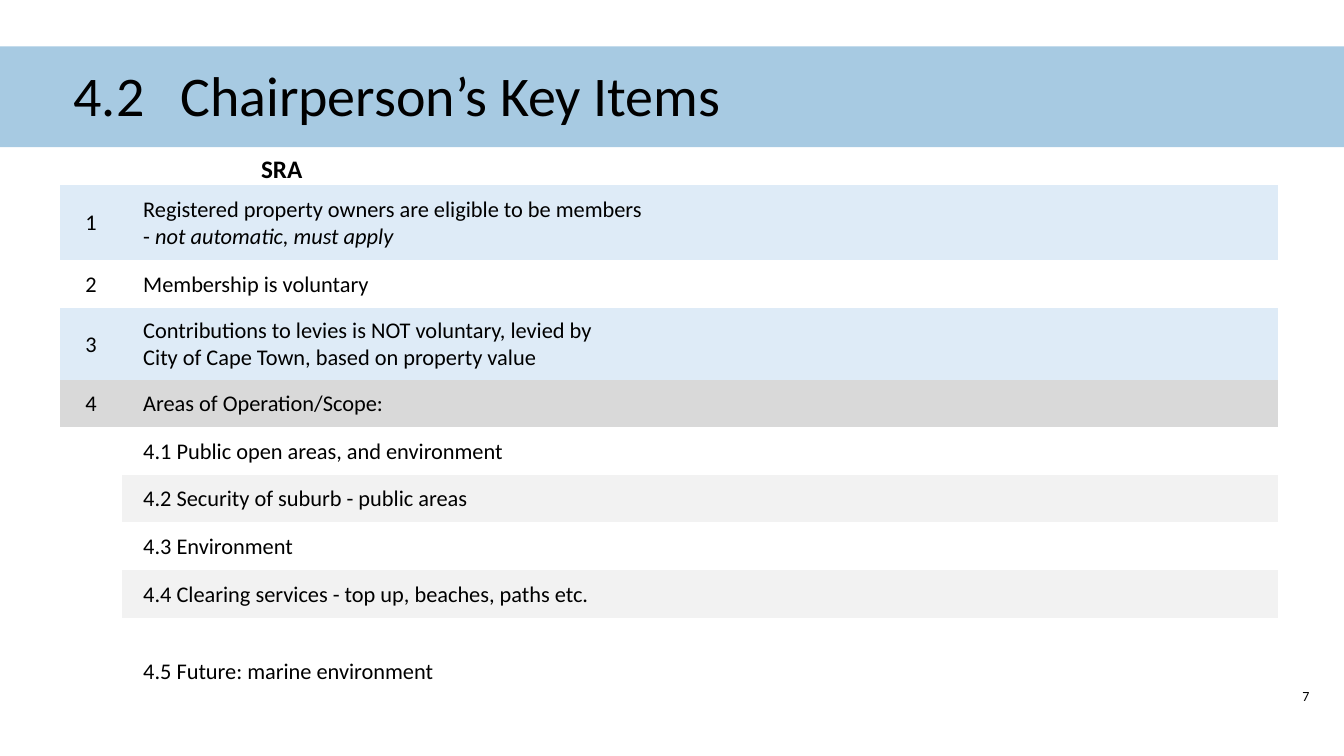
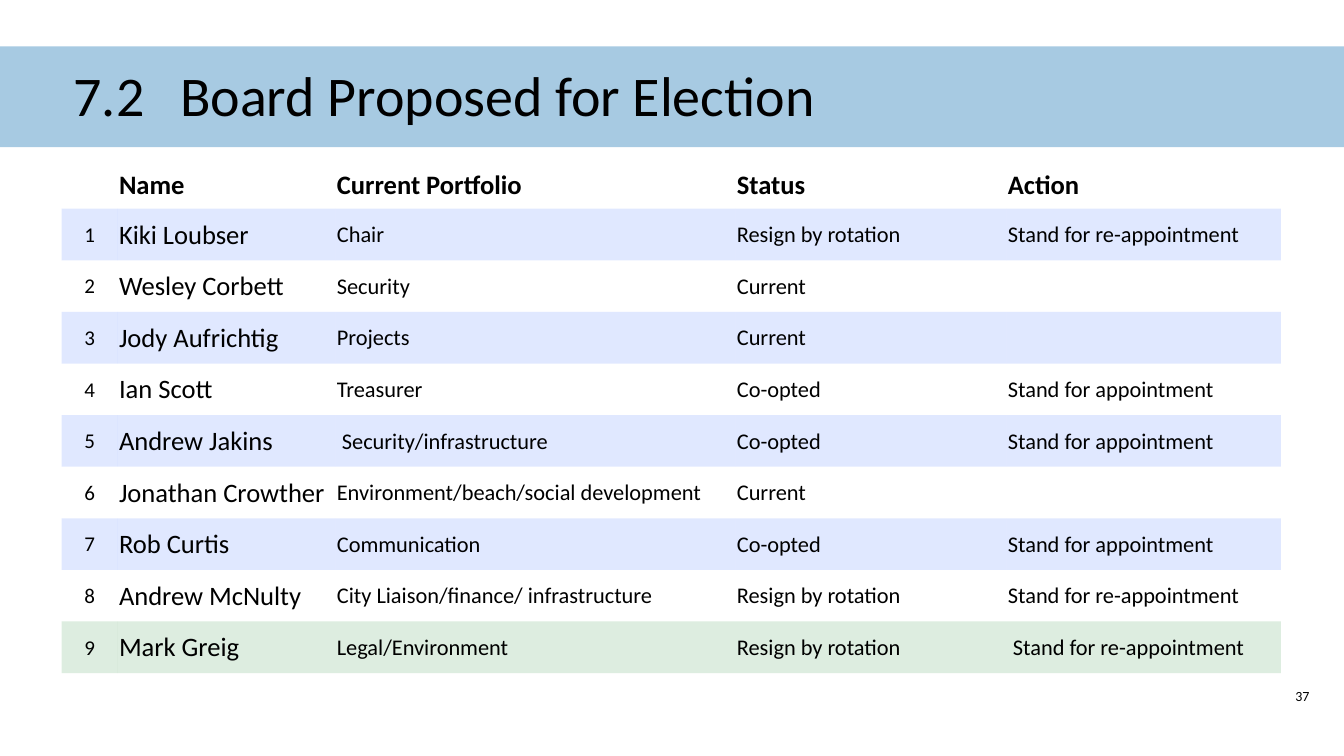
"""Build the chairperson's key items and board election slides."""
from lxml import etree
from pptx import Presentation
from pptx import util as u
from pptx.dml.color import RGBColor
from pptx.enum import shapes, text
from pptx.oxml import ns

BLACK = RGBColor(0x00, 0x00, 0x00)
BAND = RGBColor(0x3C, 0x8A, 0xC0)
PALE_BLUE = RGBColor(0xDE, 0xEB, 0xF7)
GREY = RGBColor(0xD9, 0xD9, 0xD9)
PALE_GREY = RGBColor(0xF2, 0xF2, 0xF2)
BLUE = RGBColor(0x33, 0x66, 0xFF)
GREEN = RGBColor(0x1C, 0x8C, 0x31)
FONT = "Calibri"
NO_GRID = "{2D5ABB26-0587-4C30-8999-92F81FD0307C}"
LEFT, CENTER, RIGHT = (text.PP_ALIGN.LEFT, text.PP_ALIGN.CENTER,
                       text.PP_ALIGN.RIGHT)


class Deck:
    """Hold the shared style and the current slide."""

    def __init__(self):
        """Start an empty widescreen presentation."""
        self.prs = Presentation()
        self.prs.slide_width = u.Cm(33.87)
        self.prs.slide_height = u.Cm(19.05)
        self.s = None

    def add_run(self, p, words, size, bold=False, italic=False):
        """Add one run in the deck's font."""
        r = p.add_run()
        r.text = words
        r.font.name = FONT
        r.font.size = u.Pt(size)
        r.font.bold = bold
        r.font.italic = italic
        r.font.color.rgb = BLACK

    def set_fill(self, fill, color, alpha=100):
        """Apply a solid fill with an opacity in percent."""
        fill.solid()
        fill.fore_color.rgb = color
        if alpha < 100:
            clr = fill._xPr.find(".//" + ns.qn("a:srgbClr"))
            etree.SubElement(clr, ns.qn("a:alpha")).set("val", str(alpha * 1000))

    def add_slide(self, number, title, page):
        """Add a slide with its band, title and page number."""
        self.s = self.prs.slides.add_slide(self.prs.slide_layouts[5])
        self.add_band()
        self.add_title(number, title)
        self.add_page_number(page)

    def add_band(self):
        """Draw the title band behind everything else."""
        sp = self.s.shapes.add_shape(shapes.MSO_SHAPE.RECTANGLE, 0, u.Cm(1.17),
                                     self.prs.slide_width, u.Cm(2.54))
        sp.shadow.inherit = False
        sp.line.fill.background()
        self.set_fill(sp.fill, BAND, 45)
        self.s.shapes._spTree.insert(2, sp._element)

    def add_title(self, number, title):
        """Fill the title placeholder, with a tab after the number."""
        sp = self.s.shapes.title
        sp.left, sp.top = u.Cm(1.6), u.Cm(1.32)
        sp.width, sp.height = u.Cm(29.21), u.Cm(2.31)
        tf = sp.text_frame
        tf.word_wrap = True
        tf.auto_size = text.MSO_AUTO_SIZE.NONE
        tf.vertical_anchor = text.MSO_ANCHOR.MIDDLE
        p = tf.paragraphs[0]
        tabs = etree.SubElement(p._p.get_or_add_pPr(), ns.qn("a:tabLst"))
        tab = etree.SubElement(tabs, ns.qn("a:tab"))
        tab.set("pos", str(u.Cm(2.69)))
        tab.set("algn", "l")
        p.alignment = LEFT
        p.line_spacing = 0.9
        self.add_run(p, f"{number}\t{title}", 40)

    def add_page_number(self, page):
        """Write the page number at the bottom right."""
        sp = self.s.shapes.add_textbox(u.Cm(25.63), u.Cm(17.2),
                                       u.Cm(7.62), u.Cm(1.02))
        tf = sp.text_frame
        tf.word_wrap = True
        p = tf.paragraphs[0]
        p.alignment = RIGHT
        self.add_run(p, str(page), 10)

    def add_table(self, left, top, widths, heights):
        """Add a plain table without style bands or grid."""
        frame = self.s.shapes.add_table(len(heights), len(widths), u.Cm(left),
                                        u.Cm(top), u.Cm(sum(widths)),
                                        u.Cm(sum(heights)))
        table = frame.table
        table.first_row = table.horz_banding = False
        table._tbl.tblPr.find(ns.qn("a:tableStyleId")).text = NO_GRID
        for column, width in zip(table.columns, widths):
            column.width = u.Cm(width)
        for row, height in zip(table.rows, heights):
            row.height = u.Cm(height)
        return table

    def fill_cell(self, cell, words, size, bold=False, align=LEFT, indent=0,
                  color=None, alpha=100):
        """Write a cell, one paragraph a line, with _italic_ parts."""
        cell.margin_left = cell.margin_right = cell.margin_top = u.Cm(0.03)
        cell.margin_bottom = 0
        cell.vertical_anchor = text.MSO_ANCHOR.MIDDLE
        if color is None:
            cell.fill.background()
        else:
            self.set_fill(cell.fill, color, alpha)
        tf = cell.text_frame
        for i, line in enumerate(words.split("\n")):
            p = tf.add_paragraph() if i else tf.paragraphs[0]
            p.alignment = align
            p._p.get_or_add_pPr().set("marL", str(u.Cm(indent)))
            for j, part in enumerate(line.split("_")):
                if part:
                    self.add_run(p, part, size, bold, j % 2 == 1)
            if not line:
                end = etree.SubElement(p._p, ns.qn("a:endParaRPr"))
                end.set("sz", str(size * 100))


KEY_ITEMS = [
    ("1", "Registered property owners are eligible to be members\n"
          "- _not automatic, must apply_", PALE_BLUE, 1.91),
    ("2", "Membership is voluntary", None, 1.2),
    ("3", "Contributions to levies is NOT voluntary, levied by\n"
          "City of Cape Town, based on property value", PALE_BLUE, 1.8),
    ("4", "Areas of Operation/Scope:", GREY, 1.2),
    ("", "4.1 Public open areas, and environment", None, 1.2),
    ("", "4.2 Security of suburb - public areas", PALE_GREY, 1.2),
    ("", "4.3 Environment", None, 1.2),
    ("", "4.4 Clearing services - top up, beaches, paths etc.", PALE_GREY, 1.2),
    ("", "4.5 Future: marine environment", None, 2.69),
]

BOARD_HEADS = ["", "Name", "Current Portfolio", "Status", "Action"]
BOARD = [
    ("Kiki Loubser", "Chair", "Resign by rotation", "Stand for re-appointment"),
    ("Wesley Corbett", "Security", "Current", ""),
    ("Jody Aufrichtig", "Projects", "Current", ""),
    ("Ian Scott", "Treasurer", "Co-opted", "Stand for appointment"),
    ("Andrew Jakins", " Security/infrastructure", "Co-opted",
     "Stand for appointment"),
    ("Jonathan Crowther", "Environment/beach/social development", "Current", ""),
    ("Rob Curtis", "Communication", "Co-opted", "Stand for appointment"),
    ("Andrew McNulty", "City Liaison/finance/ infrastructure",
     "Resign by rotation", "Stand for re-appointment"),
    ("Mark Greig", "Legal/Environment", "Resign by rotation",
     " Stand for re-appointment"),
]


def add_key_items(deck):
    """Add the slide of key items."""
    deck.add_slide("4.2", "Chairperson’s Key Items", 7)
    heights = [0.79] + [item[3] for item in KEY_ITEMS]
    table = deck.add_table(1.52, 3.86, [1.55, 14.12, 15.01], heights)
    for col, words in enumerate(["", "SRA", ""]):
        deck.fill_cell(table.cell(0, col), words, 18, bold=True, indent=3.48)
    for row, (number, words, color, _) in enumerate(KEY_ITEMS, 1):
        deck.fill_cell(table.cell(row, 0), number, 16, align=CENTER,
                       color=color if number else None)
        deck.fill_cell(table.cell(row, 1), words, 16, indent=0.51, color=color)
        deck.fill_cell(table.cell(row, 2), "", 16, color=color)


def add_board(deck):
    """Add the slide of board members."""
    deck.add_slide("7.2", "Board Proposed for Election", 37)
    table = deck.add_table(1.55, 4.06, [1.42, 5.49, 10.08, 6.83, 6.91],
                           [1.2] + [1.3] * len(BOARD))
    for col, words in enumerate(BOARD_HEADS):
        deck.fill_cell(table.cell(0, col), words, 19, bold=True)
    sizes = [15, 19, 16, 16, 16]
    for row, member in enumerate(BOARD, 1):
        color = GREEN if row == len(BOARD) else BLUE if row % 2 else None
        for col, words in enumerate((str(row), *member)):
            deck.fill_cell(table.cell(row, col), words, sizes[col],
                           align=LEFT if col else CENTER, color=color, alpha=15)


def main():
    """Build and save the deck."""
    deck = Deck()
    add_key_items(deck)
    add_board(deck)
    deck.prs.save("out.pptx")


if __name__ == "__main__":
    main()
